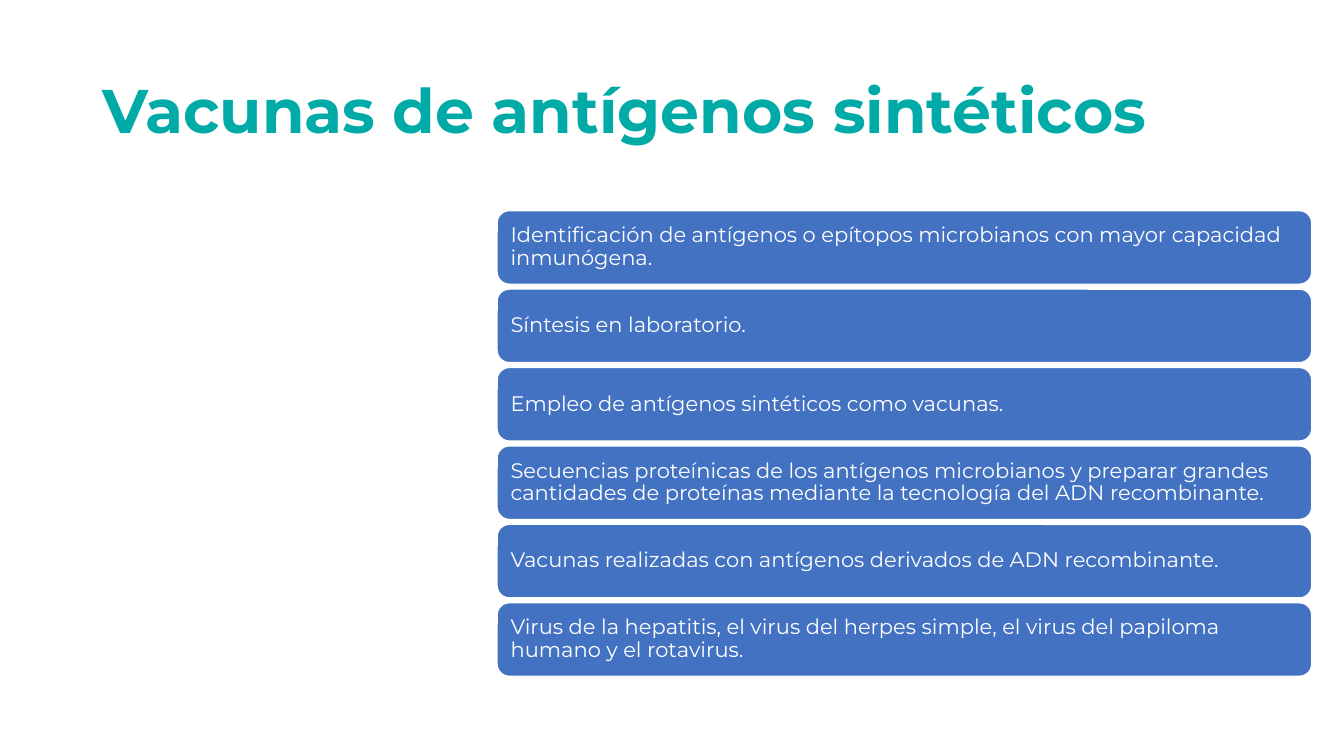
from pptx import Presentation, util as u
from pptx.dml.color import RGBColor
from pptx.enum import shapes, text

TEAL = RGBColor(0x00, 0xAA, 0xA7)
BLUE = RGBColor(0x43, 0x72, 0xC3)
WHITE = RGBColor(0xFF, 0xFF, 0xFF)
FONT = "Montserrat"

TITLE = "Vacunas de antígenos sintéticos"
STEPS = [
    "Identificación de antígenos o epítopos microbianos con mayor capacidad inmunógena.",
    "Síntesis en laboratorio.",
    "Empleo de antígenos sintéticos como vacunas.",
    "Secuencias proteínicas de los antígenos microbianos y preparar grandes "
    "cantidades de proteínas mediante la tecnología del ADN recombinante.",
    "Vacunas realizadas con antígenos derivados de ADN recombinante.",
    "Virus de la hepatitis, el virus del herpes simple, el virus del papiloma "
    "humano y el rotavirus.",
]


def write(sp, content, size, color, bold=False):
    """Fill a shape with one left-aligned, vertically centred paragraph."""
    tf = sp.text_frame
    tf.text = content
    tf.word_wrap = True
    tf.vertical_anchor = text.MSO_ANCHOR.MIDDLE
    p = tf.paragraphs[0]
    p.alignment = text.PP_ALIGN.LEFT
    p.line_spacing = 0.9
    font = p.runs[0].font
    font.name, font.size, font.bold = FONT, u.Pt(size), bold
    font.color.rgb = color


def add_title(s, left, top, width, height):
    sp = s.shapes.add_textbox(*map(u.Inches, (left, top, width, height)))
    write(sp, TITLE, 44, TEAL, bold=True)


def add_steps(s, left, top, width, height, bar_height=0.73):
    """Stack one rounded bar per step, evenly spaced over the height."""
    pitch = (height - bar_height) / (len(STEPS) - 1)
    for i, step in enumerate(STEPS):
        sp = s.shapes.add_shape(
            shapes.MSO_SHAPE.ROUNDED_RECTANGLE,
            *map(u.Inches, (left, top + i * pitch, width, bar_height)))
        sp.shadow.inherit = False
        sp.adjustments[0] = 0.167
        sp.fill.solid()
        sp.fill.fore_color.rgb = BLUE
        sp.line.color.rgb = WHITE
        sp.line.width = u.Pt(1)
        write(sp, step, 15, WHITE)
        sp.text_frame.margin_left = sp.text_frame.margin_right = u.Inches(0.1)


def main():
    prs = Presentation()
    prs.slide_width, prs.slide_height = u.Inches(13.33), u.Inches(7.5)
    s = prs.slides.add_slide(prs.slide_layouts[6])
    # Heading
    add_title(s, 0.92, 0.4, 11.5, 1.45)
    # Steps on the right
    add_steps(s, 4.93, 2.09, 8.08, 4.62)
    prs.save("out.pptx")


if __name__ == "__main__":
    main()
